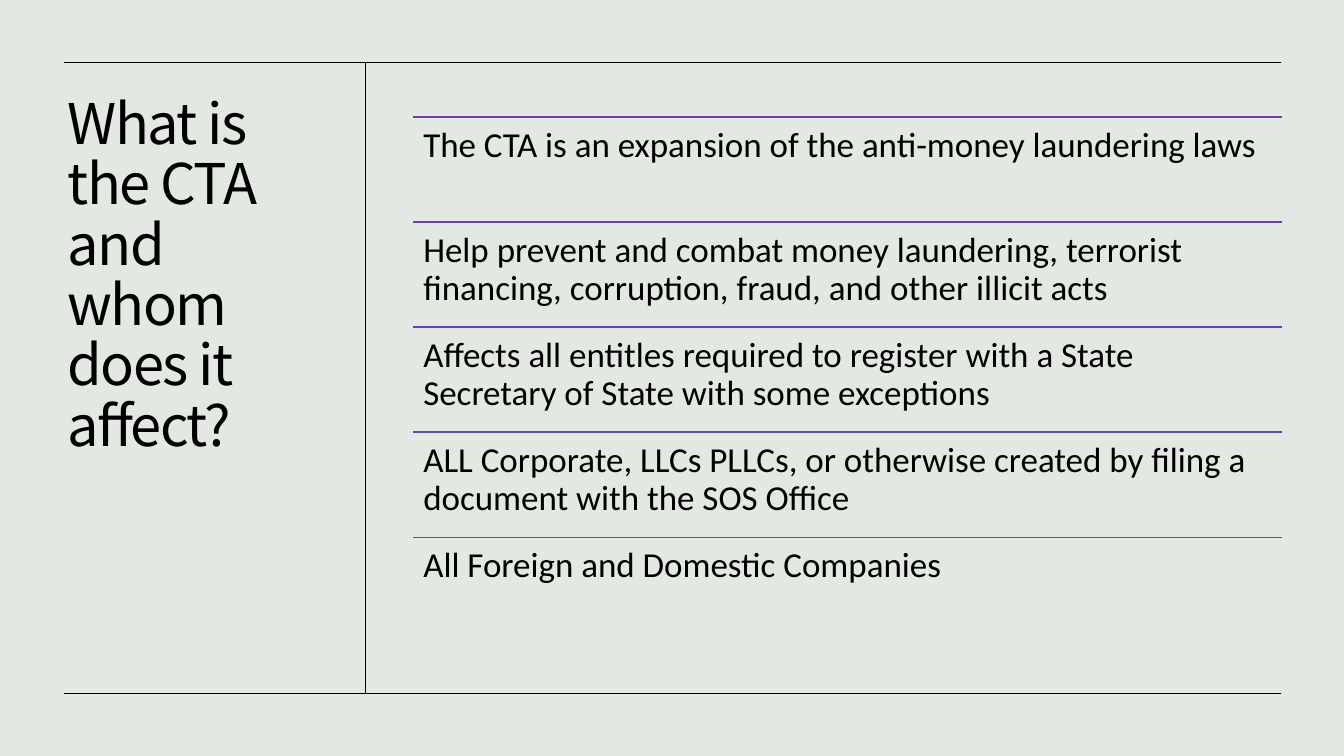
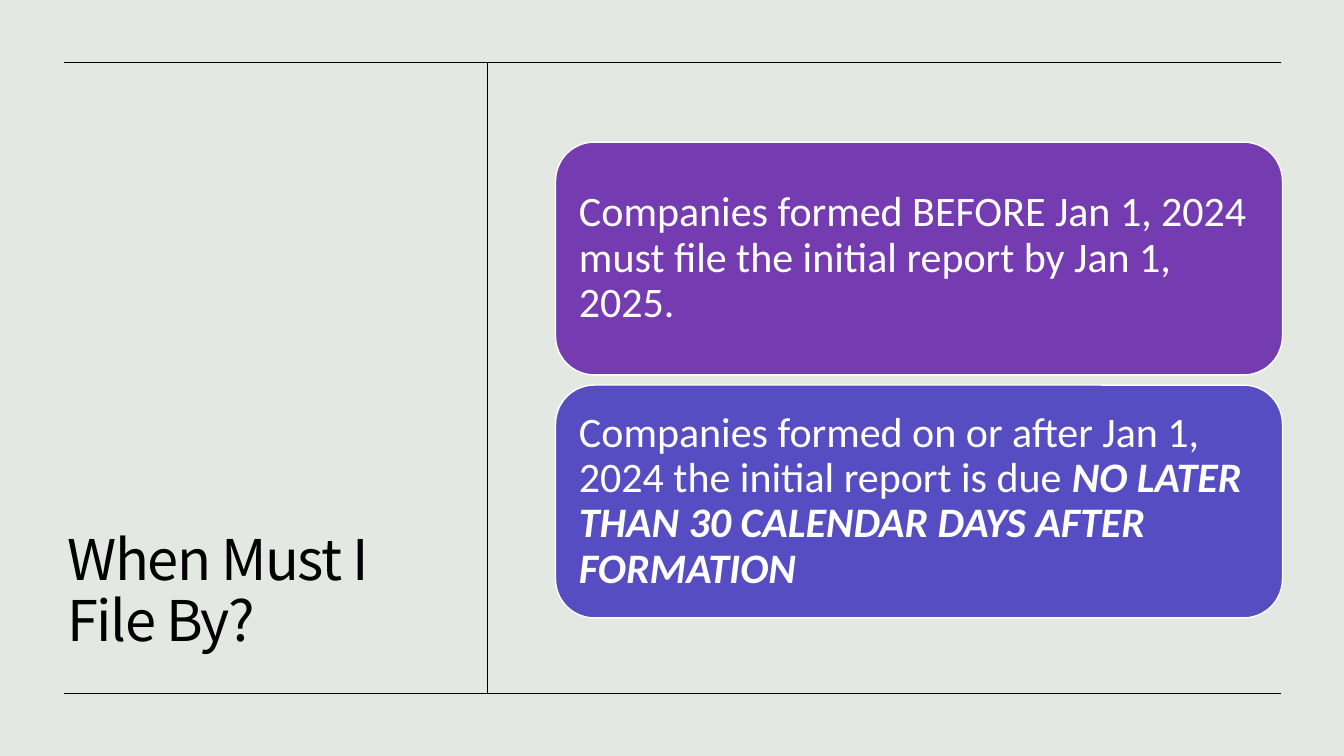
"""Build two slides on the CTA: whom it affects and when to file."""
import dataclasses
import typing

import lxml.etree
import pptx
import pptx.dml.color
import pptx.enum.shapes
import pptx.enum.text
import pptx.oxml.ns
import pptx.presentation
import pptx.slide
import pptx.util

Inches = pptx.util.Inches
Pt = pptx.util.Pt
Anchor = pptx.enum.text.MSO_ANCHOR
Shape = pptx.enum.shapes.MSO_SHAPE


@dataclasses.dataclass(frozen=True)
class Theme:
    back: str = "E3E8E2"
    ink: str = "000000"
    white: str = "FFFFFF"
    head: str = "Noto Sans CJK KR"
    body: str = "Calibri"
    title: float = 40
    item: float = 25
    card: float = 30
    hair: float = 0.5
    rule: float = 1


@dataclasses.dataclass(frozen=True)
class Item:
    text: str
    color: str


@dataclasses.dataclass(frozen=True)
class Card:
    text: str
    color: str
    strong: str = ""


THEME = Theme()
LEFT, RIGHT, TOP, BASE = 0.63, 12.71, 0.62, 6.88
EDGE = 12.72

ITEMS = (
    Item("The CTA is an expansion of the anti-money laundering laws", "753BB1"),
    Item("Help prevent and combat money laundering, terrorist financing, "
         "corruption, fraud, and other illicit acts", "6D3DB8"),
    Item("Affects all entitles required to register with a State Secretary "
         "of State with some exceptions", "6440BE"),
    Item("ALL Corporate, LLCs PLLCs, or otherwise created by filing a "
         "document with the SOS Office", "5C46C1"),
    Item("All Foreign and Domestic Companies", "564DC3"),
)
CARDS = (
    Card("Companies formed BEFORE Jan 1, 2024 must file the initial report "
         "by Jan 1, 2025.", "753BB1"),
    Card("Companies formed on or after Jan 1, 2024 the initial report is due ",
         "564DC3", "NO LATER THAN 30 CALENDAR DAYS AFTER FORMATION"),
)


def rgb(code: str) -> pptx.dml.color.RGBColor:
    """Turn a hex code into a colour."""
    return pptx.dml.color.RGBColor.from_string(code)


def write(shape: typing.Any, text: str, *, size: float, font: str = THEME.body,
          color: str = THEME.ink, strong: str = "", track: int = 0,
          anchor: Anchor = Anchor.TOP, pad: tuple[float, float] = (0.1, 0.1)) -> None:
    """Fill a shape with formatted text."""
    frame = shape.text_frame
    frame.word_wrap = True
    frame.vertical_anchor = anchor
    frame.margin_left = frame.margin_right = Inches(pad[0])
    frame.margin_top = frame.margin_bottom = Inches(pad[1])
    para = frame.paragraphs[0]
    para.alignment = pptx.enum.text.PP_ALIGN.LEFT
    para.line_spacing = 0.9
    for part, heavy in ((text, False), (strong, True)):
        if not part:
            continue
        run = para.add_run()
        run.text = part
        run.font.name = font
        run.font.size = Pt(size)
        run.font.color.rgb = rgb(color)
        if heavy:
            run.font.bold = run.font.italic = True
        if track:
            run.font._element.set("spc", str(track))


def line(slide: pptx.slide.Slide, start: tuple[float, float],
         end: tuple[float, float], color: str = THEME.ink,
         width: float = THEME.hair) -> None:
    """Draw a straight line without a shadow."""
    link = slide.shapes.add_connector(
        pptx.enum.shapes.MSO_CONNECTOR.STRAIGHT,
        *(Inches(pos) for pos in (*start, *end)))
    link.line.color.rgb = rgb(color)
    link.line.width = Pt(width)
    lxml.etree.SubElement(link._element.spPr, pptx.oxml.ns.qn("a:effectLst"))


def box(slide: pptx.slide.Slide, *area: float) -> typing.Any:
    """Add a text box at the given place."""
    return slide.shapes.add_textbox(*(Inches(side) for side in area))


def base(deck: pptx.presentation.Presentation, title: str,
         area: tuple[float, float, float, float], split: float,
         anchor: Anchor) -> pptx.slide.Slide:
    """Add a slide with its title and frame lines."""
    slide = deck.slides.add_slide(deck.slide_layouts[6])
    write(box(slide, *area), title, size=THEME.title, font=THEME.head,
          track=-100, anchor=anchor, pad=(0.1, 0.05))
    line(slide, (RIGHT, BASE), (LEFT, BASE))
    line(slide, (split, TOP), (split, BASE))
    line(slide, (RIGHT, TOP), (LEFT, TOP))
    return slide


def scope(deck: pptx.presentation.Presentation) -> None:
    """Build the slide that lists whom the CTA affects."""
    slide = base(deck, "What is the CTA and whom does it affect?",
                 (0.57, 0.9, 2.72, 5.79), 3.62, Anchor.TOP)
    left, top, step = 4.1, 1.16, 1.0425
    for row, item in enumerate(ITEMS):
        pos = top + row * step
        line(slide, (left, pos), (EDGE, pos), item.color, THEME.rule)
        write(box(slide, left, pos, EDGE - left, step), item.text,
              size=THEME.item)


def dates(deck: pptx.presentation.Presentation) -> None:
    """Build the slide with the filing dates."""
    slide = base(deck, "When Must I File By?",
                 (0.57, 0.99, 3.83, 5.54), 4.83, Anchor.BOTTOM)
    left, top, high, gap = 5.51, 1.41, 2.31, 0.1
    for row, card in enumerate(CARDS):
        pos = top + row * (high + gap)
        shape = slide.shapes.add_shape(
            Shape.ROUNDED_RECTANGLE, Inches(left), Inches(pos),
            Inches(EDGE - left), Inches(high))
        shape.shadow.inherit = False
        shape.fill.solid()
        shape.fill.fore_color.rgb = rgb(card.color)
        shape.line.color.rgb = rgb(THEME.white)
        shape.line.width = Pt(THEME.rule)
        write(shape, card.text, strong=card.strong, size=THEME.card,
              color=THEME.white, anchor=Anchor.MIDDLE, pad=(0.12, 0.12))


def main() -> None:
    """Build and save the deck."""
    deck = pptx.Presentation()
    deck.slide_width, deck.slide_height = Inches(13.33), Inches(7.5)
    fill = deck.slide_master.background.fill
    fill.solid()
    fill.fore_color.rgb = rgb(THEME.back)
    scope(deck)
    dates(deck)
    deck.save("out.pptx")


if __name__ == "__main__":
    main()
